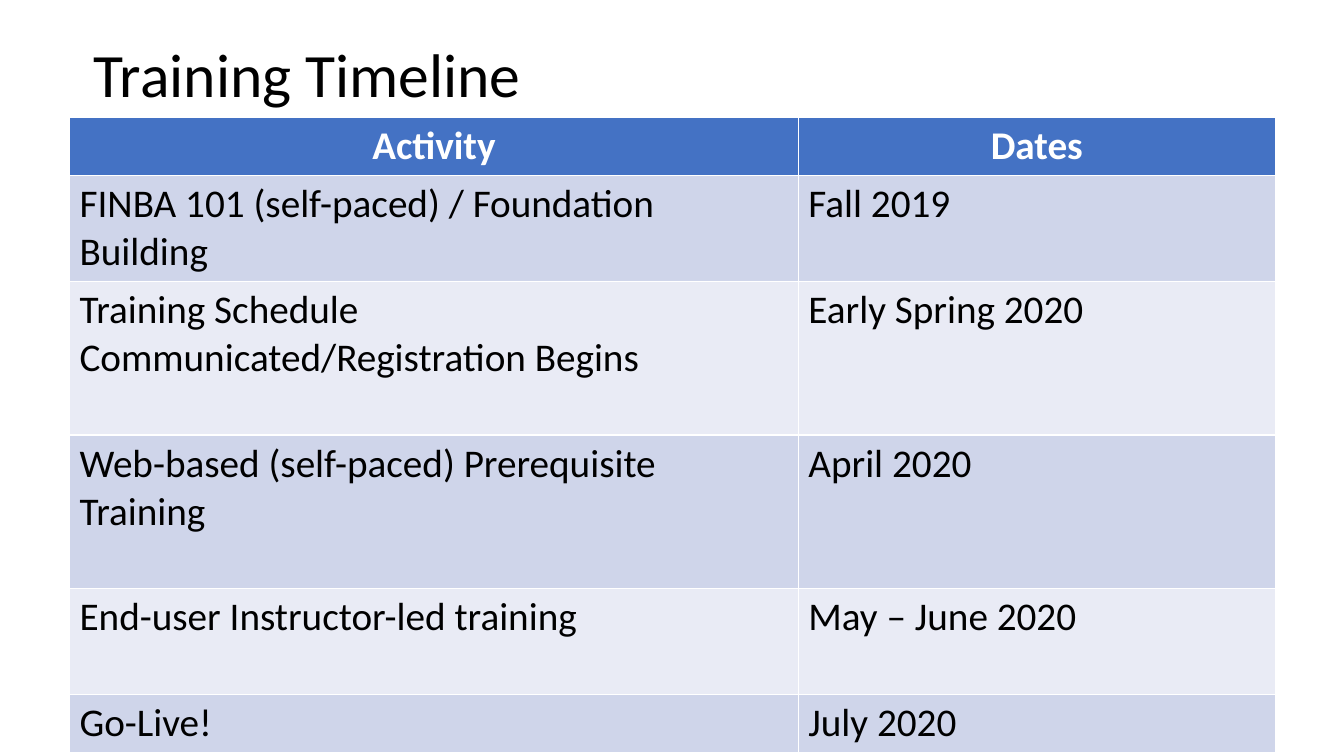
from pptx import Presentation
from pptx.dml.color import RGBColor
from pptx.enum.text import MSO_ANCHOR as Anchor, MSO_AUTO_SIZE as AutoSize, PP_ALIGN as Align
from pptx.util import Pt

COLORS = {
    "text": "000000",
    "header_text": "FFFFFF",
    "header": "4472C4",
    "odd_row": "CFD5EA",
    "even_row": "E9EBF5",
}

LINE_HEIGHT, CELL_PADDING = 34.2, 7.2

# Activity, dates and height of the row in text lines
TIMELINE = [
    ("Activity", "Dates", 1),
    ("FINBA 101 (self-paced) / Foundation Building", "Fall 2019", 2),
    ("Training Schedule Communicated/Registration Begins", "Early Spring 2020", 3),
    ("Web-based (self-paced) Prerequisite Training", "April 2020", 3),
    ("End-user Instructor-led training", "May – June 2020", 2),
    ("Go-Live!", "July 2020", 1),
]


class SlideBuilder:
    font_name = "Calibri"

    def __init__(self, slide):
        self.slide = slide

    def color(self, key):
        return RGBColor.from_string(COLORS[key])

    def set_text(self, frame, text, size, color, align=Align.LEFT, bold=False):
        frame.text = text
        paragraph = frame.paragraphs[0]
        paragraph.alignment = align
        font = paragraph.font
        font.name, font.size, font.bold = self.font_name, Pt(size), bold
        font.color.rgb = self.color(color)

    def title(self, text, left, top, width, height):
        heading = self.slide.shapes.title
        heading.left, heading.top = Pt(left), Pt(top)
        heading.width, heading.height = Pt(width), Pt(height)
        frame = heading.text_frame
        frame.word_wrap = True
        frame.auto_size = AutoSize.NONE
        frame.vertical_anchor = Anchor.TOP
        frame.margin_top = Pt(6.5)
        self.set_text(frame, text, 44, "text")

    def table(self, rows, left, top, widths):
        heights = [LINE_HEIGHT * lines + CELL_PADDING for *_, lines in rows]
        table = self.slide.shapes.add_table(
            len(rows), len(widths), Pt(left), Pt(top), Pt(sum(widths)), Pt(sum(heights))
        ).table
        for column, width in zip(table.columns, widths):
            column.width = Pt(width)
        for r, (*texts, _) in enumerate(rows):
            table.rows[r].height = Pt(heights[r])
            header = r == 0
            fill = "header" if header else "odd_row" if r % 2 else "even_row"
            for c, text in enumerate(texts):
                cell = table.cell(r, c)
                cell.fill.solid()
                cell.fill.fore_color.rgb = self.color(fill)
                self.set_text(
                    cell.text_frame, text, 28,
                    "header_text" if header else "text",
                    Align.CENTER if header else Align.LEFT, header,
                )


def main():
    deck = Presentation()
    deck.slide_width, deck.slide_height = Pt(960), Pt(540)
    builder = SlideBuilder(deck.slides.add_slide(deck.slide_layouts[5]))

    # Heading
    builder.title("Training Timeline", 59.8, 19.4, 692, 82)

    # Activities and their dates
    builder.table(TIMELINE, 49.7, 83.8, [520.6, 340.6])

    deck.save("out.pptx")


if __name__ == "__main__":
    main()
